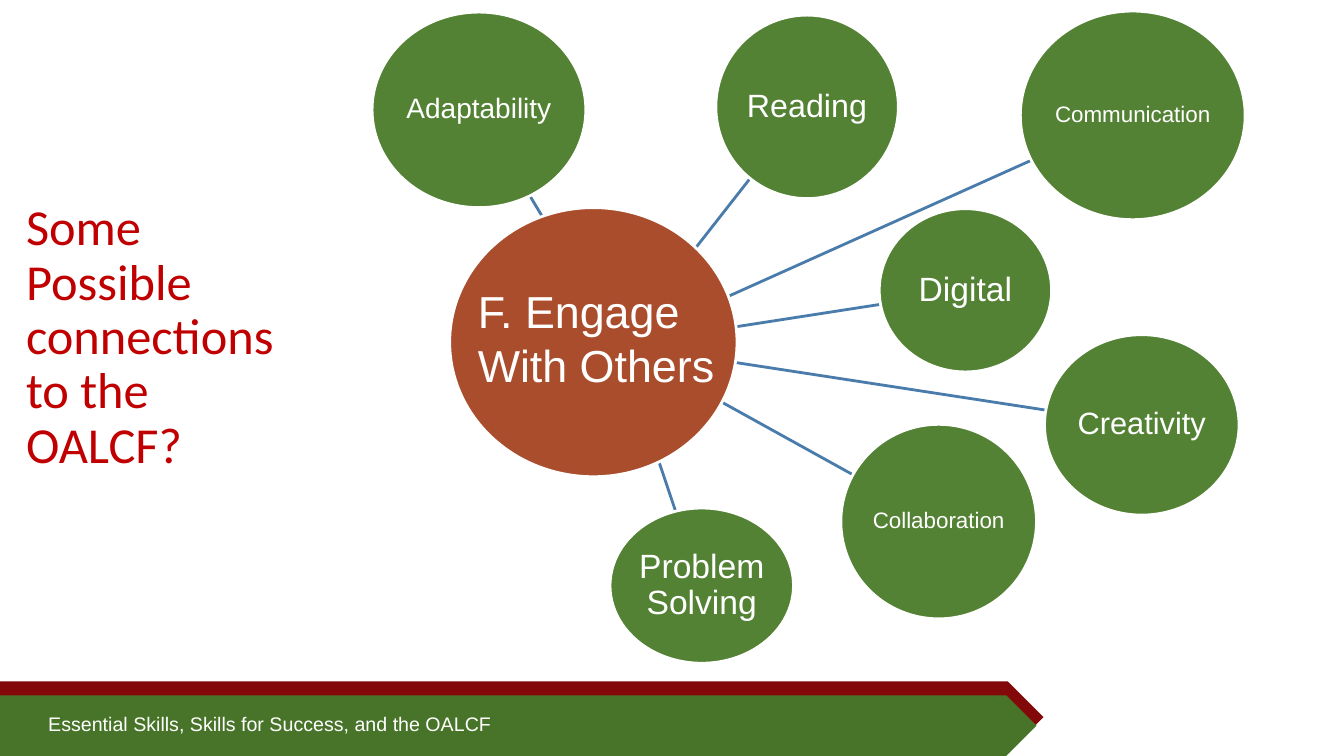
from lxml import etree
from pptx import Presentation
from pptx.dml.color import RGBColor
from pptx.enum.shapes import MSO_CONNECTOR, MSO_SHAPE
from pptx.enum.text import MSO_ANCHOR, PP_ALIGN
from pptx.oxml.ns import qn
from pptx.util import Inches, Pt

OVAL, PENTAGON = MSO_SHAPE.OVAL, MSO_SHAPE.PENTAGON
STRAIGHT = MSO_CONNECTOR.STRAIGHT
TOP, MIDDLE = MSO_ANCHOR.TOP, MSO_ANCHOR.MIDDLE
LEFT, CENTER = PP_ALIGN.LEFT, PP_ALIGN.CENTER

WIDTH, HEIGHT = 13.33, 7.5
COLORS = {
    "white": "FFFFFF",
    "title": "C00000",
    "hub": "A94D2D",
    "skill": "548235",
    "spoke": "497CAB",
    "banner_back": "82080A",
    "banner_front": "487429",
}

HUB_BOX = (4.46, 2.06, 2.85, 2.67)

# name, point size, bubble box, spoke start, spoke end
SKILLS = [
    ("Reading", 23, (7.1, 0.15, 1.81, 1.82), (6.5, 2.97), (7.44, 1.77)),
    ("Communication", 16, (10.12, 0.11, 2.23, 2.07), (6.6, 3.22), (10.23, 1.59)),
    ("Digital", 24, (8.72, 2.07, 1.71, 1.62), (6.6, 3.35), (8.73, 3.02)),
    ("Creativity", 22, (10.36, 3.32, 1.93, 1.79), (6.6, 3.49), (10.38, 4.07)),
    ("Collaboration", 16, (8.34, 4.21, 1.94, 1.93), (6.6, 3.68), (8.46, 4.71)),
    ("Adaptability", 20, (3.69, 0.12, 2.12, 1.94), (5.87, 2.97), (5.26, 1.95)),
    ("Problem Solving", 24, (6.05, 5.04, 1.82, 1.54), (6.3, 3.88), (6.7, 5.07)),
]


def rgb(name):
    return RGBColor.from_string(COLORS[name])


def inches(values):
    return [Inches(value) for value in values]


def write(holder, text, size, color="white", font="Arial", align=LEFT,
          anchor=TOP, spacing=1.0, insets=(0.1, 0.05), wrap=True):
    frame = holder.text_frame
    frame.word_wrap = wrap
    frame.vertical_anchor = anchor
    frame.margin_left = frame.margin_right = Inches(insets[0])
    frame.margin_top = frame.margin_bottom = Inches(insets[1])
    paragraph = frame.paragraphs[0]
    paragraph.alignment = align
    paragraph.line_spacing = spacing
    run = paragraph.add_run()
    run.text = text
    run.font.size = Pt(size)
    run.font.name = font
    run.font.color.rgb = rgb(color)


def add_label(slide, box, text, size, **style):
    write(slide.shapes.add_textbox(*inches(box)), text, size, **style)


def add_filled(slide, preset, box, fill, outline=None):
    shape = slide.shapes.add_shape(preset, *inches(box))
    shape.shadow.inherit = False
    shape.fill.solid()
    shape.fill.fore_color.rgb = rgb(fill)
    if outline:
        shape.line.color.rgb = rgb(outline)
        shape.line.width = Pt(2)
    else:
        shape.line.fill.background()
    return shape


def add_spoke(slide, start, end):
    spoke = slide.shapes.add_connector(STRAIGHT, *inches(start + end))
    spoke.line.color.rgb = rgb("spoke")
    spoke.line.width = Pt(2)
    etree.SubElement(spoke._element.spPr, qn("a:effectLst"))


def add_banner(slide, left, top, width, height):
    add_filled(slide, PENTAGON, (left, top, width, height - 0.03), "banner_back")
    add_filled(slide, PENTAGON, (left, top + 0.14, width - 0.07, height - 0.14),
               "banner_front")
    add_label(slide, (left + 0.38, top + 0.25, width - 1.08, 0.34),
              "Essential Skills, Skills for Success, and the OALCF", 14)


def add_skill_map(slide, hub_box, skills):
    for name, size, box, start, end in skills:
        add_spoke(slide, start, end)
    add_filled(slide, OVAL, hub_box, "hub", "white")
    for name, size, box, start, end in skills:
        bubble = add_filled(slide, OVAL, box, "skill", "white")
        write(bubble, name, size, align=CENTER, anchor=MIDDLE, spacing=0.9,
              insets=(0, 0), wrap=" " in name)
    left, top, width, height = hub_box
    add_label(slide, (left + 0.18, top + 0.71, width - 0.3, 1.18),
              "F. Engage With Others", 32)


def main():
    deck = Presentation()
    deck.slide_width, deck.slide_height = inches((WIDTH, HEIGHT))
    slide = deck.slides.add_slide(deck.slide_layouts[6])
    add_banner(slide, 0, 6.76, 10.35, HEIGHT - 6.76)
    add_label(slide, (0.16, 0.69, 2.98, 5.33),
              "Some Possible connections to the OALCF?", 36, color="title",
              font="Calibri", anchor=MIDDLE, spacing=0.9)
    add_skill_map(slide, HUB_BOX, SKILLS)
    deck.save("out.pptx")


if __name__ == "__main__":
    main()
